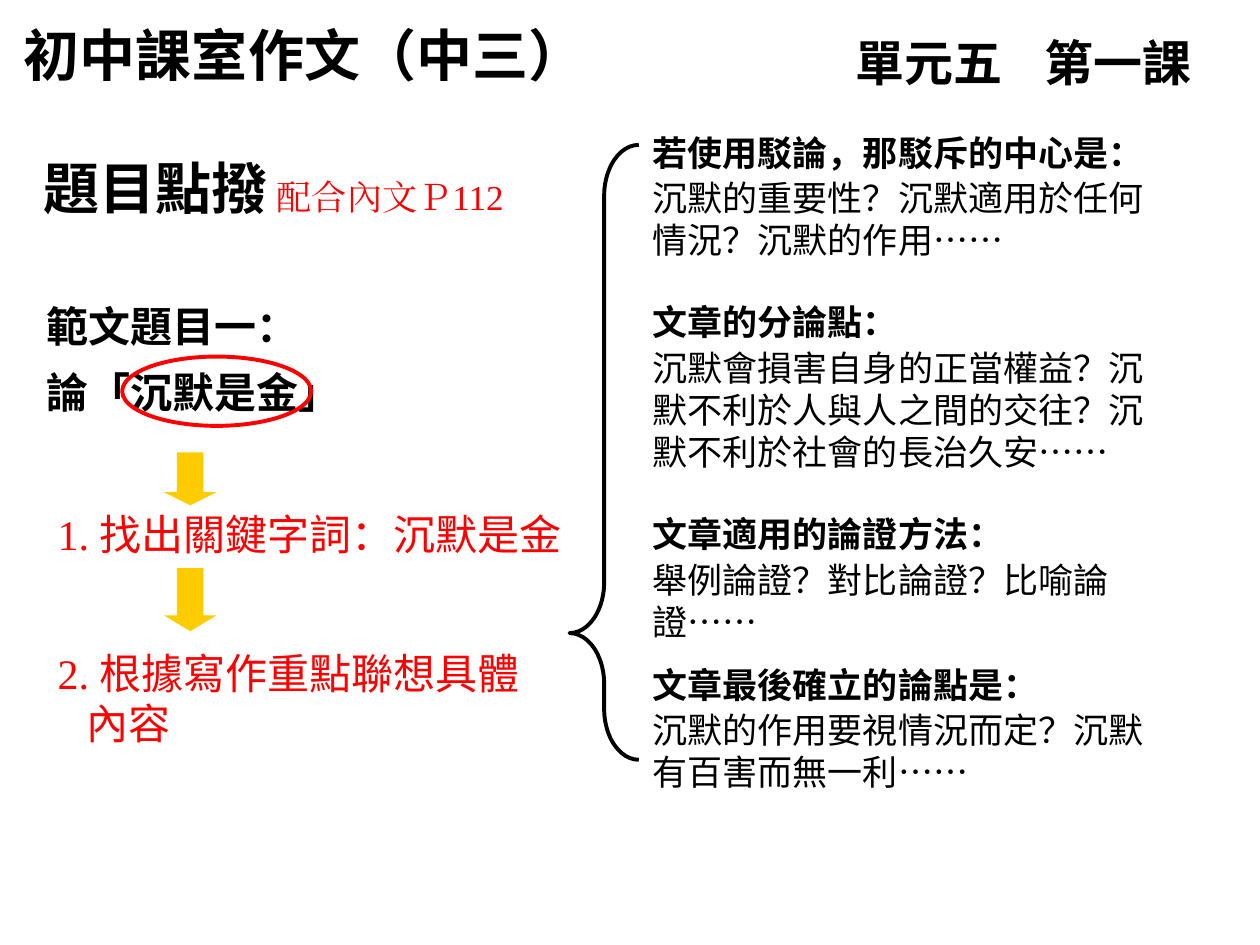
import pptx
import pptx.dml.color
import pptx.enum.shapes
import pptx.enum.text
import pptx.oxml
import pptx.util
from pptx.util import Inches

BLACK = pptx.dml.color.RGBColor(0x00, 0x00, 0x00)
RED = pptx.dml.color.RGBColor(0xFF, 0x00, 0x00)
GOLD = pptx.dml.color.RGBColor(0xFF, 0xCC, 0x00)

SANS = "DejaVu Sans"
CJK = "Noto Sans CJK SC"
SERIF = "Times New Roman"
HEADING = "Cabin"
ARIAL = "Arial"
DRAWING_NS = 'xmlns:a="http://schemas.openxmlformats.org/drawingml/2006/main"'

ASPECTS = [
    (0, SANS, "若使用駁論，那駁斥的中心是：",
     "沉默的重要性？沉默適用於任何情況？沉默的作用"),
    (23, SANS, "文章的分論點：",
     "沉默會損害自身的正當權益？沉默不利於人與人之間的交往？沉默不利於社會的長治久安"),
    (23, ARIAL, "文章適用的論證方法：", "舉例論證？對比論證？比喻論證"),
    (12, ARIAL, "文章最後確立的論點是：", "沉默的作用要視情況而定？沉默有百害而無一利"),
]


def place(part, box):
    """Move a part to its box of left, top, width and height in inches."""
    part.left, part.top, part.width, part.height = map(Inches, box)


def prepare_frame(frame):
    """Make a text frame wrap from its top edge and return it."""
    frame.word_wrap = True
    frame.auto_size = pptx.enum.text.MSO_AUTO_SIZE.NONE
    frame.vertical_anchor = pptx.enum.text.MSO_ANCHOR.TOP
    return frame


def add_frame(slide, box):
    """Add a text box and return its frame."""
    return prepare_frame(slide.shapes.add_textbox(*map(Inches, box)).text_frame)


def next_line(frame, before=0):
    """Return the first unused paragraph, left-aligned and spaced."""
    line = frame.paragraphs[0]
    if line.runs:
        line = frame.add_paragraph()
    line.alignment = pptx.enum.text.PP_ALIGN.LEFT
    line.space_before = pptx.util.Pt(before)
    return line


def indent(line, left):
    """Give a paragraph a left margin with no hanging indent."""
    properties = line._p.get_or_add_pPr()
    properties.set("marL", str(Inches(left)))
    properties.set("indent", "0")
    return properties


def add_run(line, text, size, font, color=BLACK, bold=False):
    """Add one run whose Latin and East Asian fonts agree."""
    run = line.add_run()
    run.text = text
    run.font.size = pptx.util.Pt(size)
    run.font.name = font
    run.font.bold = bold
    run.font.color.rgb = color
    run._r.get_or_add_rPr().find("{*}latin").addnext(
        pptx.oxml.parse_xml(f'<a:ea {DRAWING_NS} typeface="{font}"/>'))


def add_figure(slide, kind, box, fill=None, line=None, adjustments=()):
    """Add a flat preset shape with an optional fill and outline."""
    figure = slide.shapes.add_shape(kind, *map(Inches, box))
    figure.shadow.inherit = False
    for index, value in enumerate(adjustments):
        figure.adjustments[index] = value
    if fill is None:
        figure.fill.background()
    else:
        figure.fill.solid()
        figure.fill.fore_color.rgb = fill
    if line is None:
        figure.line.fill.background()
    else:
        figure.line.color.rgb = line
        figure.line.width = pptx.util.Pt(2.25)


def write_header(slide, title_box, lesson_box):
    """Write the course title and the lesson label."""
    course = slide.shapes.title
    place(course, title_box)
    add_run(next_line(prepare_frame(course.text_frame)),
            "初中課室作文（中三）", 32, HEADING, bold=True)
    lesson = next_line(add_frame(slide, lesson_box))
    indent(lesson, 0).append(pptx.oxml.parse_xml(
        f'<a:tabLst {DRAWING_NS}><a:tab pos="{Inches(1.36)}" algn="l"/></a:tabLst>'))
    add_run(lesson, "單元五\t第一課", 28, HEADING, bold=True)


def write_topic(slide, box):
    """Write the section name, its page reference and the essay topic."""
    left, top, width, height = box
    section = next_line(add_frame(slide, (left, top, 3.08, 0.63)))
    add_run(section, "題目點撥", 32, ARIAL, bold=True)
    reference = next_line(add_frame(slide, (left + 1.85, top + 0.17, 2.47, 0.43)))
    add_run(reference, "配合內文Ｐ112", 20, SERIF, RED)
    topic = add_frame(slide, (left + 0.02, top + 1.05, width, height - 1.05))
    for text in ("範文題目一：", "論「沉默是金」"):
        line = next_line(topic)
        line.line_spacing = 1.3
        add_run(line, text, 24, SANS, bold=True)
    add_figure(slide, pptx.enum.shapes.MSO_SHAPE.OVAL,
               (left + 0.72, top + 1.66, 1.5, 0.55), line=RED)


def write_steps(slide, box):
    """Write the two numbered steps, each below a gold arrow."""
    left, top, width, height = box
    steps = [
        (0.4, 0.42, 0.25, "1. ", ["找出關鍵字詞：沉默是金"]),
        (1.5, 0.5, 0.3, "2. ", ["根據寫作重點聯想具體", "內容"]),
    ]
    for offset, arrow_height, head, number, texts in steps:
        arrow_top = top + offset - (0.4 if offset == 0.4 else 0.58)
        add_figure(slide, pptx.enum.shapes.MSO_SHAPE.DOWN_ARROW,
                   (left + 0.94, arrow_top, 0.42, arrow_height),
                   fill=GOLD, adjustments=(0.5, head))
        frame = add_frame(slide, (left, top + offset, width, height - 1.5))
        first = next_line(frame)
        add_run(first, number, 24, SERIF, RED)
        add_run(first, texts[0], 24, SANS, RED)
        for text in texts[1:]:
            line = next_line(frame)
            indent(line, 0.23)
            add_run(line, text, 24, SANS, RED)


def write_aspects(slide, box):
    """Write the four aspects of the essay beside their brace."""
    left, top, width, height = box
    add_figure(slide, pptx.enum.shapes.MSO_SHAPE.LEFT_BRACE,
               (left - 0.56, top + 0.16, 0.55, 4.88),
               line=BLACK, adjustments=(0.735, 0.794))
    aspects = slide.placeholders[1]
    place(aspects, box)
    frame = prepare_frame(aspects.text_frame)
    for gap, font, heading, questions in ASPECTS:
        heading_line = next_line(frame, gap)
        add_run(heading_line, heading, 20, font, bold=True)
        question_line = next_line(frame, 2)
        add_run(question_line, questions, 20, SANS)
        add_run(question_line, "……", 20, CJK)
        for line in (heading_line, question_line):
            indent(line, 0).append(pptx.oxml.parse_xml(f"<a:buNone {DRAWING_NS}/>"))


def main():
    """Build the slide and save it."""
    deck = pptx.Presentation()
    deck.slide_width, deck.slide_height = Inches(10), Inches(7.5)
    slide = deck.slides.add_slide(deck.slide_layouts[1])
    write_header(slide, (0.09, 0.11, 5.22, 0.63), (6.69, 0.21, 3.35, 0.57))
    write_topic(slide, (0.25, 1.17, 5, 2.19))
    write_steps(slide, (0.36, 3.59, 4.2, 2.4))
    write_aspects(slide, (5.08, 0.99, 4.17, 5.4))
    deck.save("out.pptx")


if __name__ == "__main__":
    main()
